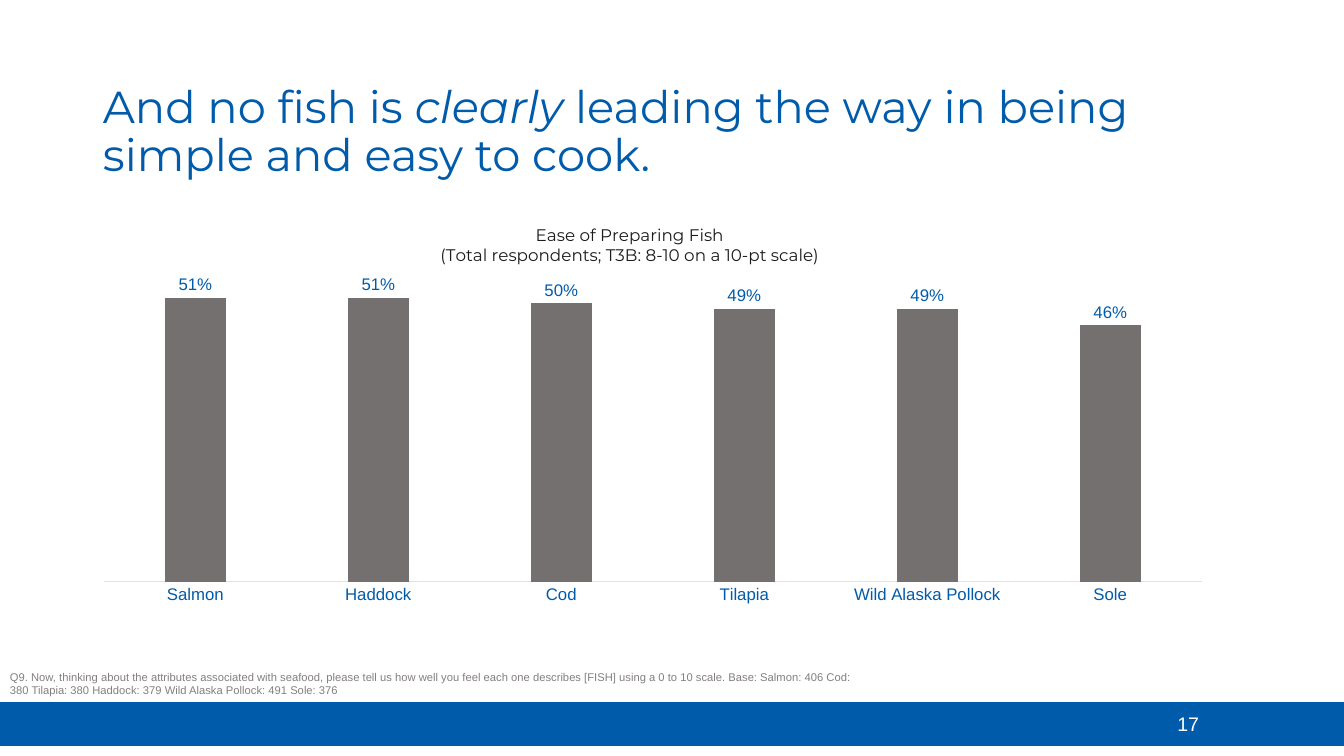
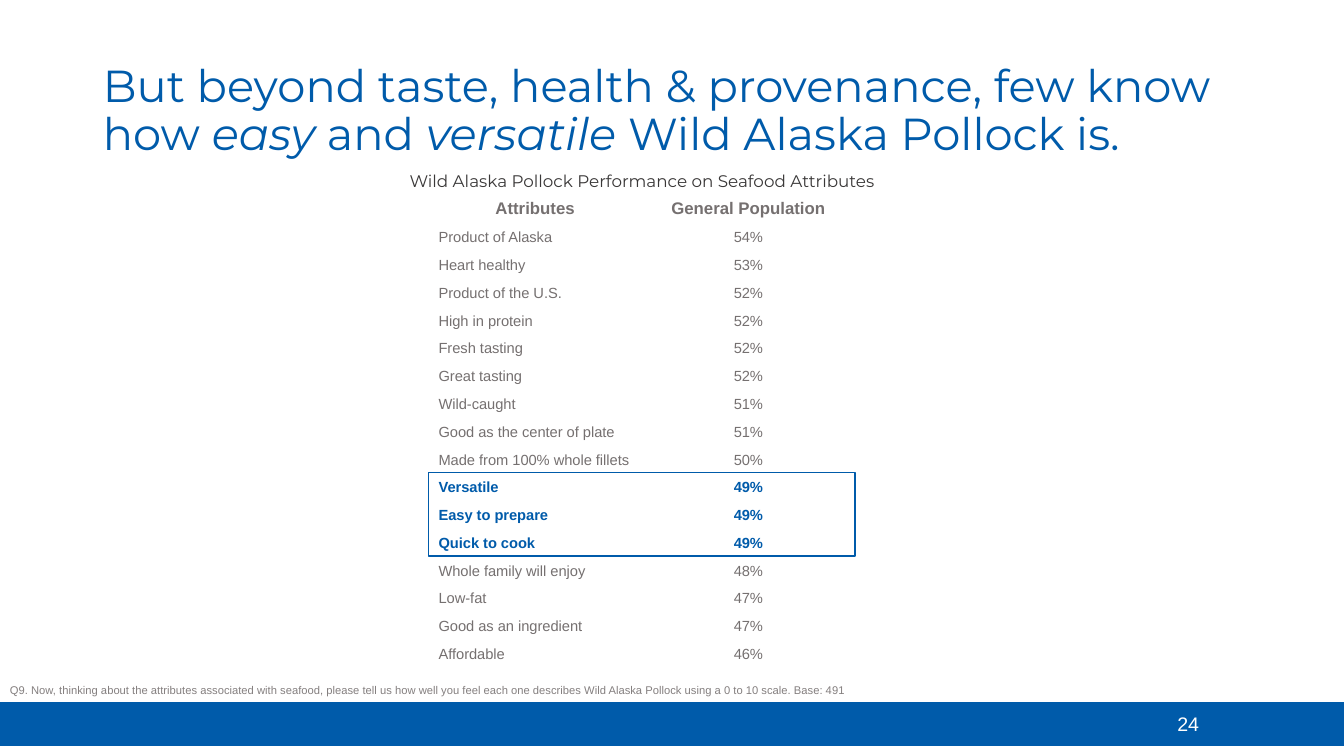
import pptx
import pptx.chart.data
import pptx.dml.color
import pptx.enum.chart
import pptx.enum.shapes
import pptx.enum.text
import pptx.oxml
import pptx.oxml.ns
import pptx.util
from pptx.util import Inches

COLORS = {
    "blue": "005BAA", "pale_blue": "CCE7FF", "white": "FFFFFF",
    "gray": "757070", "note": "847F7F", "dark": "1D1C1C", "caption": "3A3838",
}
HEADING_FONT = "Montserrat"
BODY_FONT = "Arial"
ALIGN = pptx.enum.text.PP_ALIGN
ANCHOR = pptx.enum.text.MSO_ANCHOR

EASE = {"Salmon": 0.51, "Haddock": 0.51, "Cod": 0.50, "Tilapia": 0.49,
        "Wild Alaska Pollock": 0.49, "Sole": 0.46}

ATTRIBUTES = [
    ("Product of Alaska", "54%"), ("Heart healthy", "53%"),
    ("Product of the U.S.", "52%"), ("High in protein", "52%"),
    ("Fresh tasting", "52%"), ("Great tasting", "52%"),
    ("Wild-caught", "51%"), ("Good as the center of plate", "51%"),
    ("Made from 100% whole fillets", "50%"), ("Versatile", "49%"),
    ("Easy to prepare", "49%"), ("Quick to cook", "49%"),
    ("Whole family will enjoy", "48%"), ("Low-fat", "47%"),
    ("Good as an ingredient", "47%"), ("Affordable", "46%"),
]
HIGHLIGHTED = ["Versatile", "Easy to prepare", "Quick to cook"]


def rgb(name):
    return pptx.dml.color.RGBColor.from_string(COLORS[name])


def style_font(font, size, color, face=BODY_FONT, bold=False):
    font.size = pptx.util.Pt(size)
    font.name = face
    font.bold = bold
    font.color.rgb = rgb(color)


def write(frame, text, size, color, face=BODY_FONT, bold=False, align=None, spacing=None):
    """One paragraph for each line; words between asterisks are italic."""
    for index, line in enumerate(text.split("\n")):
        para = frame.add_paragraph() if index else frame.paragraphs[0]
        para.alignment = align
        para.line_spacing = spacing
        for number, piece in enumerate(line.split("*")):
            if piece:
                span = para.add_run()
                span.text = piece
                style_font(span.font, size, color, face, bold)
                if number % 2:
                    span.font.italic = True


def add_text(page, box, text, **style):
    shape = page.shapes.add_textbox(*map(Inches, box))
    shape.text_frame.word_wrap = True
    write(shape.text_frame, text, **style)


def add_rectangle(page, box, fill=None):
    shape = page.shapes.add_shape(
        pptx.enum.shapes.MSO_SHAPE.RECTANGLE, *map(Inches, box))
    shape.shadow.inherit = False
    if fill:
        shape.fill.solid()
        shape.fill.fore_color.rgb = rgb(fill)
    else:
        shape.fill.background()
    shape.line.color.rgb = rgb("blue")
    shape.line.width = pptx.util.Pt(1)
    return shape


# Shared parts
def add_band_to_layout(page):
    """Draw the footer band and hand it to the layout that all pages use."""
    band = add_rectangle(page, (0, 6.97, 13.33, 0.42), fill="blue")
    page.slide_layout.shapes.element.insert(2, band.element)


def add_page(deck, title, title_height, number, note, note_box):
    page = deck.slides.add_slide(deck.slide_layouts[5])
    heading = page.shapes.title
    heading.left, heading.top = Inches(0.92), Inches(0.4)
    heading.width, heading.height = Inches(11.5), Inches(title_height)
    frame = heading.text_frame
    frame.word_wrap = True
    frame.auto_size = pptx.enum.text.MSO_AUTO_SIZE.NONE
    frame.vertical_anchor = ANCHOR.BOTTOM
    write(frame, title, size=32, color="blue", face=HEADING_FONT,
          align=ALIGN.LEFT, spacing=0.9)
    add_text(page, (11.25, 7.01, 1.07, 0.4), number, size=14, color="white",
             align=ALIGN.CENTER)
    add_text(page, note_box, note, size=8, color="note")
    return page


# Chart region
def set_layout(element, index, **fractions):
    """Give a chart part a manual place, as fractions of the chart."""
    for old in element.findall(pptx.oxml.ns.qn("c:layout")):
        element.remove(old)
    target = '<c:layoutTarget val="inner"/>' if "w" in fractions else ""
    modes = "".join(f'<c:{key}Mode val="edge"/>' for key in "xy")
    values = "".join(f'<c:{key} val="{value}"/>' for key, value in fractions.items())
    element.insert(index, pptx.oxml.parse_xml(
        f'<c:layout {pptx.oxml.ns.nsdecls("c")}><c:manualLayout>'
        f'{target}{modes}{values}</c:manualLayout></c:layout>'))


def add_ease_chart(page, box):
    data = pptx.chart.data.CategoryChartData(number_format="0%")
    data.categories = list(EASE)
    data.add_series("Series 1", list(EASE.values()))
    chart = page.shapes.add_chart(
        pptx.enum.chart.XL_CHART_TYPE.COLUMN_CLUSTERED, *map(Inches, box), data).chart
    style_font(chart.font, 10, "blue", "Calibri")
    chart.has_legend = False

    chart.has_title = True
    write(chart.chart_title.text_frame,
          "Ease of Preparing Fish\n(Total respondents; T3B: 8-10 on a 10-pt scale)",
          size=12, color="dark", face=HEADING_FONT, align=ALIGN.CENTER)
    set_layout(chart.chart_title.element, 1, x=0.31, y=0.01)
    plot_area = chart.element.find(".//" + pptx.oxml.ns.qn("c:plotArea"))
    set_layout(plot_area, 0, x=0.016, y=0.077, w=0.968, h=0.838)

    # Axes
    fish_axis = chart.category_axis
    fish_axis.major_tick_mark = pptx.enum.chart.XL_TICK_MARK.NONE
    fish_axis.format.line.color.rgb = rgb("pale_blue")
    fish_axis.format.line.width = pptx.util.Pt(0.75)
    style_font(fish_axis.tick_labels.font, 12, "blue")
    share_axis = chart.value_axis
    share_axis.minimum_scale, share_axis.maximum_scale = 0, 0.6
    share_axis.has_major_gridlines = False
    share_axis.visible = False

    # Columns and their labels
    plot = chart.plots[0]
    plot.gap_width, plot.overlap = 200, -27
    plot.vary_by_categories = False
    fill = plot.series[0].format.fill
    fill.solid()
    fill.fore_color.rgb = rgb("gray")
    plot.has_data_labels = True
    labels = plot.data_labels
    labels.show_value = True
    labels.number_format, labels.number_format_is_linked = "0%", False
    labels.position = pptx.enum.chart.XL_LABEL_POSITION.OUTSIDE_END
    style_font(labels.font, 12, "blue")


# Table region
def add_attribute_table(page, box):
    left, top, width, height = box
    header_height = 0.29
    row_height = (height - header_height) / len(ATTRIBUTES)
    rows = [("Attributes", "General Population")] + ATTRIBUTES
    table = page.shapes.add_table(len(rows), 2, *map(Inches, box)).table
    table.first_row = table.horz_banding = False
    for row_index, row in enumerate(rows):
        header = row_index == 0
        marked = row[0] in HIGHLIGHTED
        table.rows[row_index].height = Inches(header_height if header else row_height)
        for column_index, text in enumerate(row):
            cell = table.cell(row_index, column_index)
            cell.fill.background()
            cell.vertical_anchor = ANCHOR.MIDDLE
            write(cell.text_frame, text, size=12 if header else 10.5,
                  color="blue" if marked else "gray", bold=header or marked,
                  align=ALIGN.CENTER if header or column_index else ALIGN.LEFT)

    # Frame around the highlighted rows
    first = [name for name, share in ATTRIBUTES].index(HIGHLIGHTED[0])
    add_rectangle(page, (left, top + header_height + first * row_height,
                         width, len(HIGHLIGHTED) * row_height))


def build_ease_page(deck):
    page = add_page(
        deck, "And no fish is *clearly* leading the way in being simple and easy to cook.",
        1.45, "17",
        "Q9. Now, thinking about the attributes associated with seafood, please tell us "
        "how well you feel each one describes [FISH] using a 0 to 10 scale. Base: "
        "Salmon: 406 Cod: 380 Tilapia: 380 Haddock: 379 Wild Alaska Pollock: 491 Sole: 376",
        (0, 6.6, 8.72, 0.37))
    add_ease_chart(page, (0.85, 2.15, 11.25, 3.96))
    return page


def build_attribute_page(deck):
    page = add_page(
        deck, "But beyond taste, health & provenance, few know how *easy* and "
        "*versatile* Wild Alaska Pollock is.", 1.24, "24",
        "Q9. Now, thinking about the attributes associated with seafood, please tell us "
        "how well you feel each one describes Wild Alaska Pollock using a 0 to 10 scale. "
        "Base: 491", (0, 6.73, 9.83, 0.24))
    add_text(page, (3.64, 1.64, 5.46, 0.3),
             "Wild Alaska Pollock Performance on Seafood Attributes",
             size=12, color="caption", face=HEADING_FONT, align=ALIGN.CENTER)
    add_attribute_table(page, (4.25, 1.92, 4.23, 4.7))


def main():
    deck = pptx.Presentation()
    deck.slide_width, deck.slide_height = Inches(13.33), Inches(7.5)
    add_band_to_layout(build_ease_page(deck))
    build_attribute_page(deck)
    deck.save("out.pptx")


if __name__ == "__main__":
    main()
